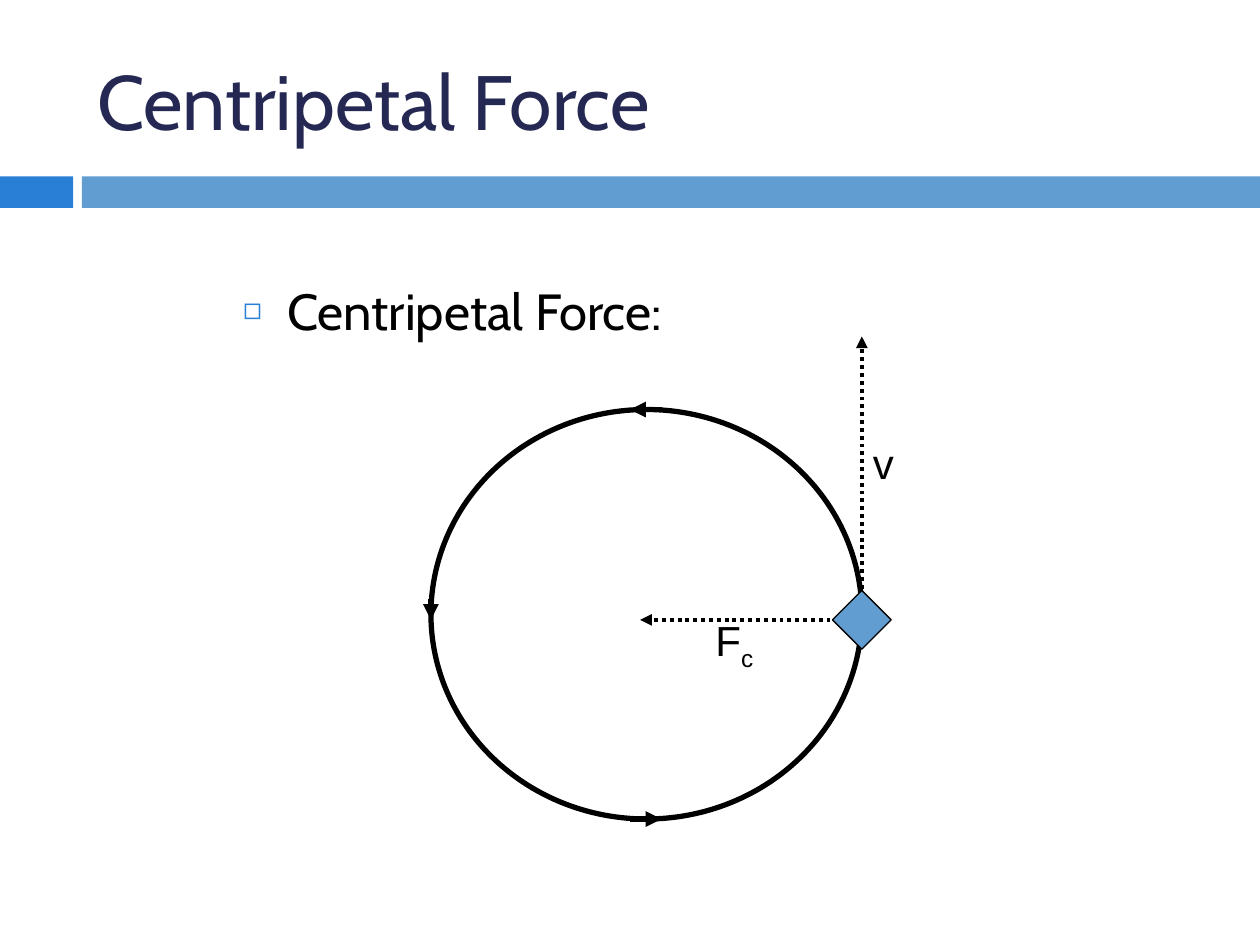
from lxml import etree
from pptx import Presentation
from pptx.dml.color import RGBColor
from pptx.enum.dml import MSO_LINE
from pptx.enum.shapes import MSO_CONNECTOR, MSO_SHAPE
from pptx.enum.text import MSO_ANCHOR, MSO_AUTO_SIZE, PP_ALIGN
from pptx.oxml.ns import qn
from pptx.util import Inches, Pt

RECTANGLE, OVAL = MSO_SHAPE.RECTANGLE, MSO_SHAPE.OVAL
STRAIGHT = MSO_CONNECTOR.STRAIGHT
DOTTED = MSO_LINE.ROUND_DOT  # saved as sysDot

NAVY = RGBColor(0x24, 0x28, 0x52)
BLUE = RGBColor(0x29, 0x7F, 0xD5)
LIGHT_BLUE = RGBColor(0x62, 0x9D, 0xD1)
BLACK = RGBColor(0, 0, 0)

# Content
TITLE = "Centripetal Force"
TOPIC = "Centripetal Force:"
LABELS = [  # text, subscript, left, top, width
    ("F", "c", 5.58, 4.83, 0.67),
    ("v", "", 6.83, 3.42, 0.5),
]

# Geometry in inches
WIDTH, HEIGHT = 10, 7.5
BAND_TOP, BAND_HEIGHT = 1.4, 0.25
BANDS = [(0, 0.58, BLUE), (0.65, WIDTH - 0.65, LIGHT_BLUE)]
LEFT, TOP, ORBIT_WIDTH, ORBIT_HEIGHT = 3.42, 3.25, 3.42, 3.25
RIGHT, BOTTOM = LEFT + ORBIT_WIDTH, TOP + ORBIT_HEIGHT
BODY_Y = 4.92
BODY_SIZE = 0.33
VECTORS = [  # start, tip
    ((RIGHT, BODY_Y), (RIGHT, 2.67)),
    ((RIGHT, BODY_Y), (5.08, BODY_Y)),
]
DIRECTION_MARKS = [  # start, tip, anticlockwise round the orbit
    ((LEFT, 4.75), (LEFT, BODY_Y)),
    ((5, BOTTOM), (5.25, BOTTOM)),
    ((RIGHT, BODY_Y), (RIGHT, 4.75)),
    ((5.25, TOP), (5, TOP)),
]


def place(shape, left, top, width, height):
    shape.left, shape.top = Inches(left), Inches(top)
    shape.width, shape.height = Inches(width), Inches(height)


def style_run(run, font, size, color):
    run.font.name, run.font.size = font, Pt(size)
    run.font.color.rgb = color


def add_shape(kind, box, fill=None, line_width=0):
    shape = slide.shapes.add_shape(kind, *map(Inches, box))
    shape.shadow.inherit = False
    if fill is None:
        shape.fill.background()
    else:
        shape.fill.solid()
        shape.fill.fore_color.rgb = fill
    if line_width:
        shape.line.color.rgb = BLACK
        shape.line.width = Pt(line_width)
    else:
        shape.line.fill.background()
    return shape


def add_arrow(start, tip, width, dash=None):
    arrow = slide.shapes.add_connector(STRAIGHT, *map(Inches, start + tip))
    arrow.line.color.rgb = BLACK
    arrow.line.width = Pt(width)
    if dash is not None:
        arrow.line.dash_style = dash
    etree.SubElement(arrow.line._get_or_add_ln(), qn("a:tailEnd"), type="triangle")
    etree.SubElement(arrow._element.spPr, qn("a:effectLst"))


def add_bullet(paragraph, char, color, percent, indent):
    props = paragraph._p.get_or_add_pPr()
    props.set("marL", str(Inches(indent)))
    props.set("indent", str(-Inches(indent)))
    bullet_color = etree.SubElement(props, qn("a:buClr"))
    etree.SubElement(bullet_color, qn("a:srgbClr"), val=str(color))
    etree.SubElement(props, qn("a:buSzPct"), val=str(percent * 1000))
    etree.SubElement(props, qn("a:buChar"), char=char)


prs = Presentation()
prs.slide_width, prs.slide_height = Inches(WIDTH), Inches(HEIGHT)
slide = prs.slides.add_slide(prs.slide_layouts[1])

# Band under the title
for left, width, color in BANDS:
    add_shape(RECTANGLE, (left, BAND_TOP, width, BAND_HEIGHT), color)

# Title
title = slide.shapes.title
place(title, 0.67, 0.25, 8.92, 1.08)
title.text_frame.text = TITLE
title.text_frame.vertical_anchor = MSO_ANCHOR.MIDDLE
heading = title.text_frame.paragraphs[0]
heading.alignment = PP_ALIGN.LEFT
style_run(heading.runs[0], "Cabin", 44, NAVY)

# Bulleted topic
body = slide.placeholders[1]
place(body, 1.83, 2.17, 7.67, 0.67)
body.text_frame.text = TOPIC
topic = body.text_frame.paragraphs[0]
topic.space_before = Pt(7)
add_bullet(topic, "◻", BLUE, 60, 0.35)
style_run(topic.runs[0], "Cabin", 29, BLACK)

# Velocity and force vectors
for start, tip in VECTORS:
    add_arrow(start, tip, 2.25, DOTTED)

# Vector labels
for symbol, subscript, left, top, width in LABELS:
    label = slide.shapes.add_textbox(*map(Inches, (left, top, width, 0.5)))
    frame = label.text_frame
    frame.word_wrap = True
    frame.auto_size = MSO_AUTO_SIZE.SHAPE_TO_FIT_TEXT
    frame.text = symbol
    paragraph = frame.paragraphs[0]
    if subscript:
        paragraph.add_run().text = subscript
        paragraph.runs[1].font._element.set("baseline", "-25000")
    for run in paragraph.runs:
        style_run(run, "Arial", 24, BLACK)

# Orbit with its direction of travel
add_shape(OVAL, (LEFT, TOP, ORBIT_WIDTH, ORBIT_HEIGHT), line_width=3)
for start, tip in DIRECTION_MARKS:
    add_arrow(start, tip, 3)

# Orbiting body
orbiting_body = add_shape(
    RECTANGLE,
    (RIGHT - BODY_SIZE / 2, BODY_Y - BODY_SIZE / 2, BODY_SIZE, BODY_SIZE),
    LIGHT_BLUE, 0.75)
orbiting_body.rotation = 45

prs.save("out.pptx")
